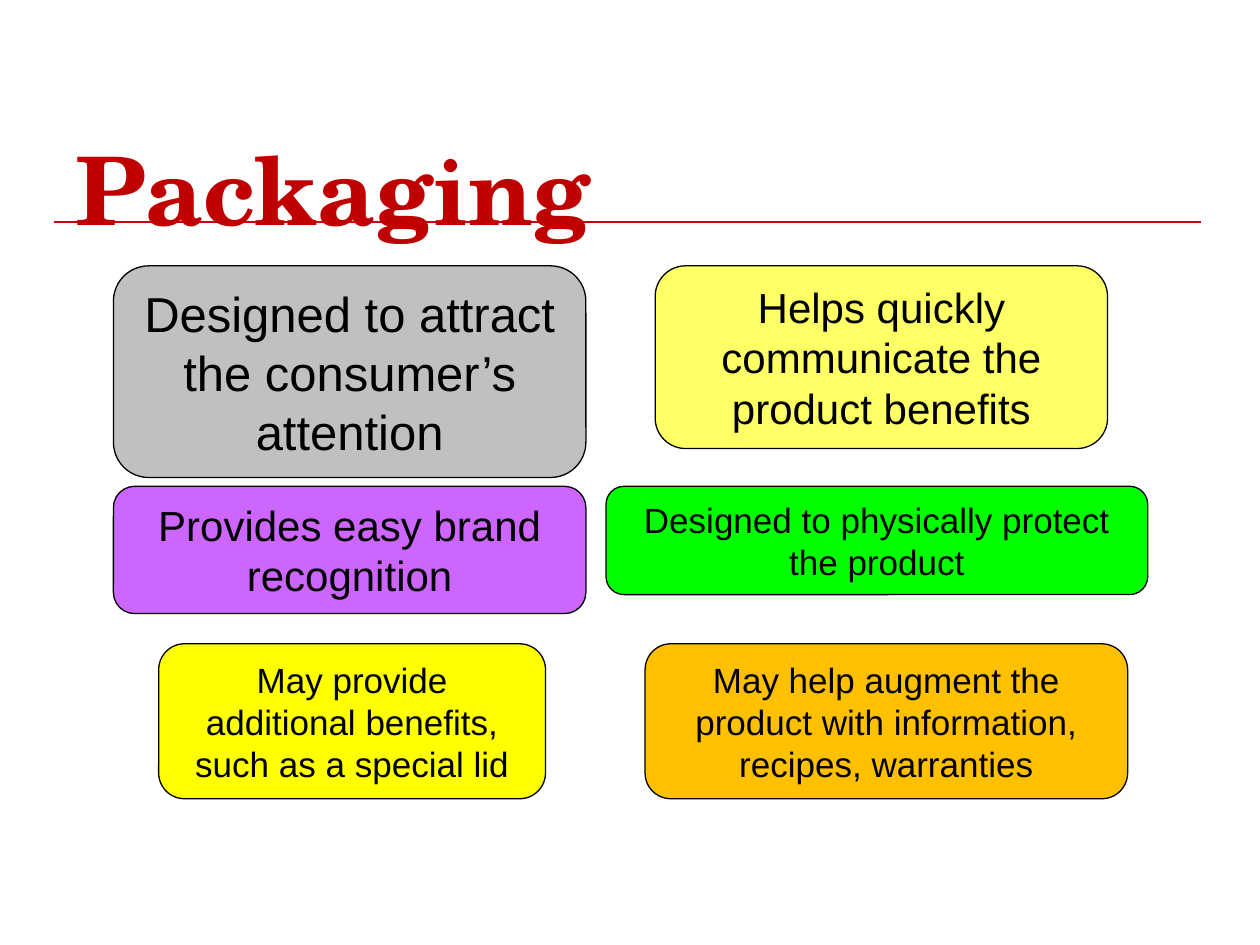
from lxml import etree
from pptx import Presentation
from pptx.dml.color import RGBColor
from pptx.enum.shapes import MSO_CONNECTOR, MSO_SHAPE
from pptx.enum.text import MSO_ANCHOR, MSO_AUTO_SIZE, PP_ALIGN
from pptx.oxml.ns import qn
from pptx.util import Inches, Pt

STRAIGHT = MSO_CONNECTOR.STRAIGHT
ROUNDED = MSO_SHAPE.ROUNDED_RECTANGLE
TOP, MIDDLE = MSO_ANCHOR.TOP, MSO_ANCHOR.MIDDLE
LEFT, CENTER = PP_ALIGN.LEFT, PP_ALIGN.CENTER
NO_AUTOFIT = MSO_AUTO_SIZE.NONE

COLORS = {
    "rule": "CC0011", "title": "C00000", "ink": "000000",
    "gray": "C0C0C0", "purple": "CC66FF", "orange": "FFC000",
    "pale": "FFFF66", "yellow": "FFFF00", "green": "00FF00",
}
ROWS = [2.11, 3.86, 5.11]
BENEFITS = [
    (0, 0.9, 3.75, 1.68, "gray", 28, "Designed to attract the consumer’s attention"),
    (0, 5.2, 3.59, 1.45, "pale", 24, "Helps quickly communicate the product benefits"),
    (1, 0.9, 3.75, 1.01, "purple", 24, "Provides easy brand recognition"),
    (1, 4.81, 4.3, 0.86, "green", 20, "Designed to physically protect the product"),
    (2, 1.26, 3.07, 1.23, "yellow", 20, "May provide additional benefits, such as a special lid"),
    (2, 5.12, 3.83, 1.23, "orange", 20,
     "May help augment the product with information, recipes, warranties"),
]


def color(name):
    return RGBColor.from_string(COLORS[name])


def write(shape, text, anchor, align, ink, font_format):
    frame = shape.text_frame
    frame.word_wrap = True
    frame.auto_size = NO_AUTOFIT
    frame.vertical_anchor = anchor
    para = frame.paragraphs[0]
    para.alignment = align
    span = para.add_run()
    span.text = text
    span.font.color.rgb = color(ink)
    for name, value in font_format.items():
        setattr(span.font, name, value)


deck = Presentation()
deck.slide_width, deck.slide_height = Inches(10), Inches(7.5)
page = deck.slides.add_slide(deck.slide_layouts[5])

title = page.shapes.title
title.left, title.top = Inches(0.5), Inches(0.99)
title.width, title.height = Inches(9), Inches(0.56)
write(title, "Packaging", TOP, LEFT, "title",
      {"name": "TeX Gyre Schola", "size": Pt(54), "bold": True})

rule = page.shapes.add_connector(
    STRAIGHT, Inches(0.43), Inches(1.76), Inches(9.53), Inches(1.76))
rule.line.color.rgb = color("rule")
rule.line.width = Pt(1)
etree.SubElement(rule.element.spPr, qn("a:effectLst"))
title.element.addprevious(rule.element)

for row, left, width, height, fill, size, text in BENEFITS:
    box = page.shapes.add_shape(
        ROUNDED, Inches(left), Inches(ROWS[row]), Inches(width), Inches(height))
    box.shadow.inherit = False
    box.fill.solid()
    box.fill.fore_color.rgb = color(fill)
    box.line.color.rgb = color("ink")
    box.line.width = Pt(0.75)
    write(box, text, MIDDLE, CENTER, "ink", {"name": "Arial", "size": Pt(size)})

deck.save("out.pptx")
